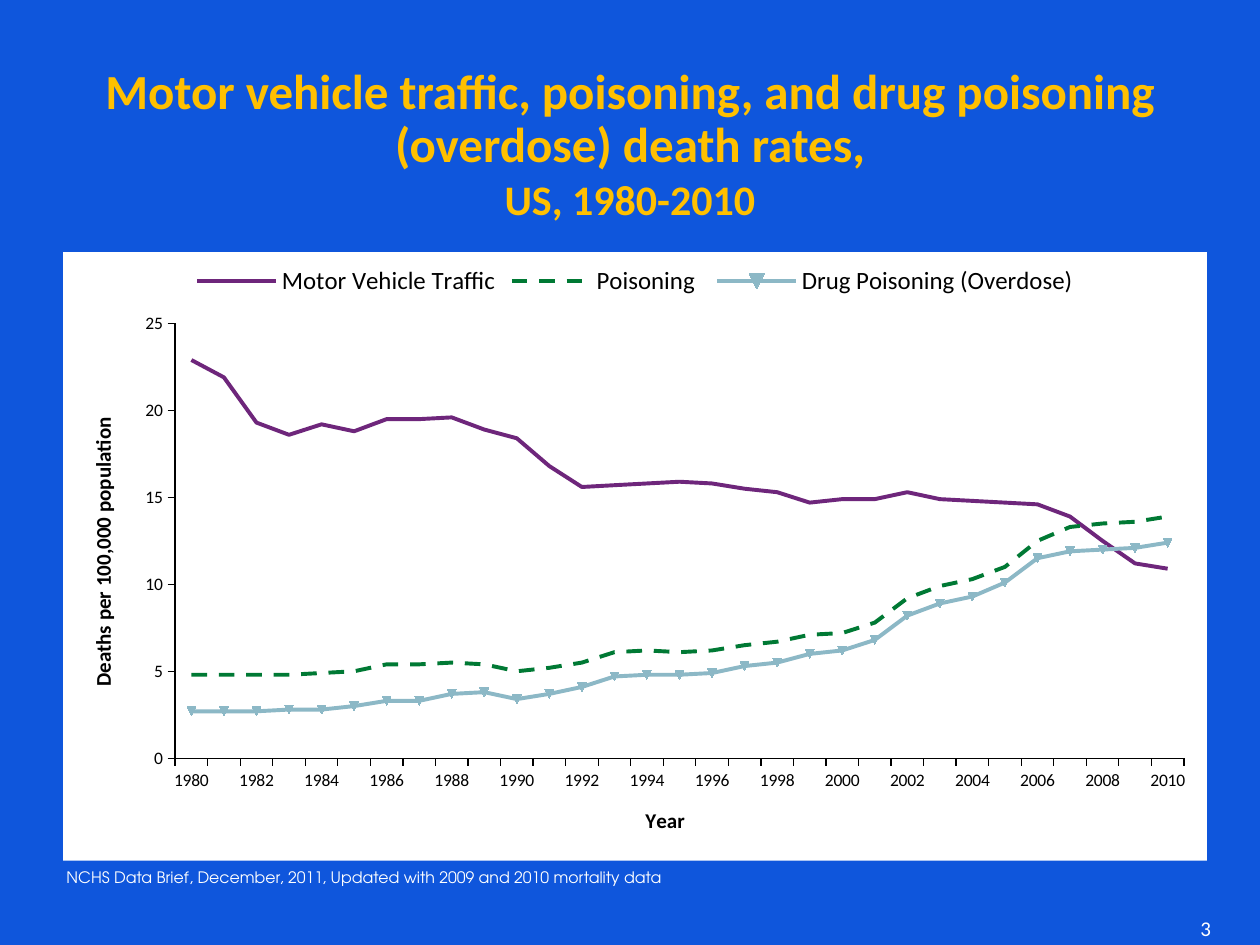
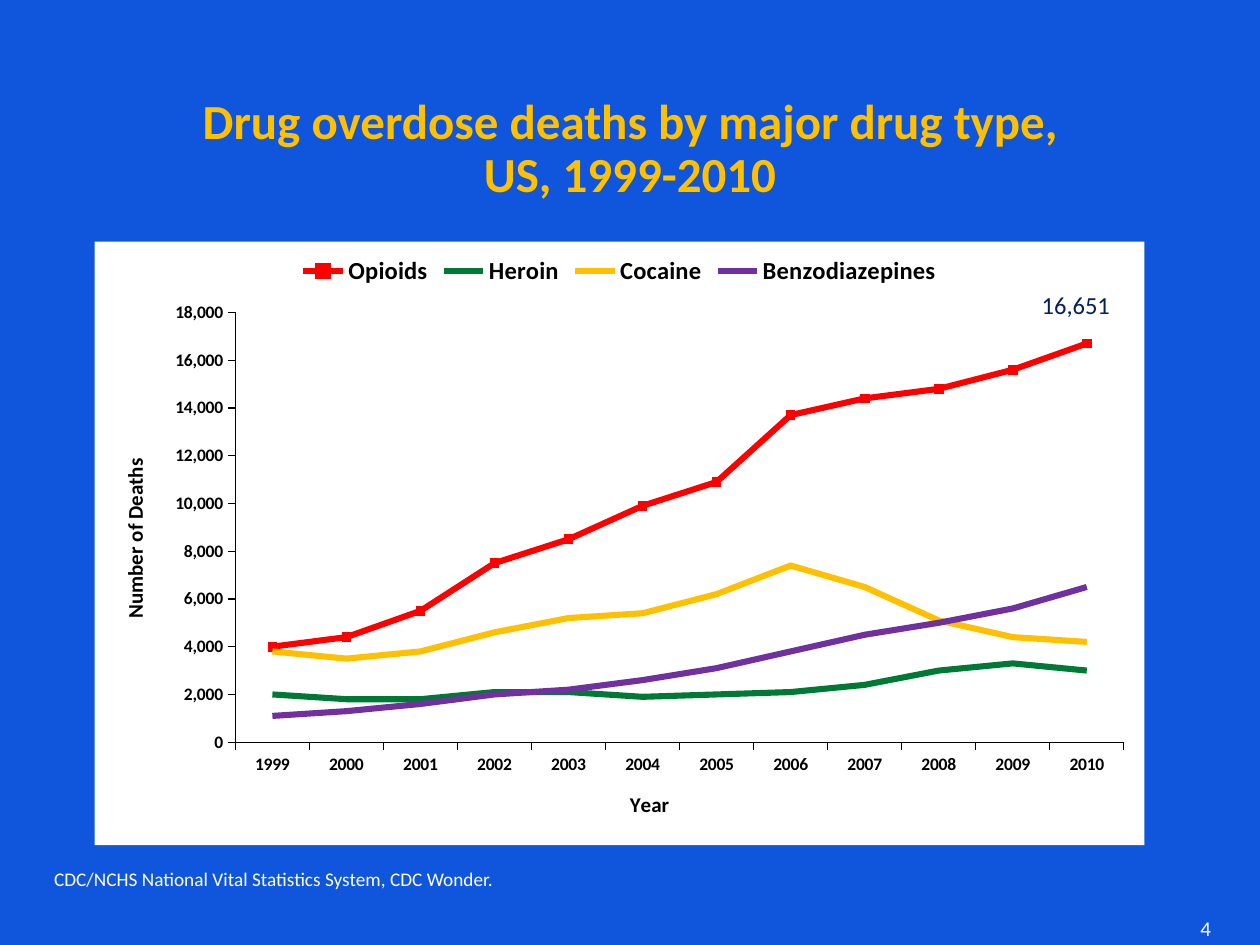
from pptx import Presentation
from pptx.chart.data import CategoryChartData
from pptx.dml.color import RGBColor
from pptx.enum.chart import XL_CHART_TYPE, XL_LEGEND_POSITION, XL_MARKER_STYLE, XL_TICK_MARK
from pptx.enum.dml import MSO_LINE
from pptx.enum.text import MSO_ANCHOR, MSO_AUTO_SIZE, PP_ALIGN
from pptx.oxml import parse_xml
from pptx.oxml.ns import nsdecls, qn
from pptx.util import Cm, Pt

LINE_CHART = XL_CHART_TYPE.LINE_MARKERS
LEGEND_TOP = XL_LEGEND_POSITION.TOP
AUTO_MARKER, NO_MARKER = XL_MARKER_STYLE.AUTOMATIC, XL_MARKER_STYLE.NONE
TICK_OUT, TICK_NONE = XL_TICK_MARK.OUTSIDE, XL_TICK_MARK.NONE
DASH = MSO_LINE.DASH
BOTTOM, TOP = MSO_ANCHOR.BOTTOM, MSO_ANCHOR.TOP
CENTER, LEFT = PP_ALIGN.CENTER, PP_ALIGN.LEFT
NO_AUTOFIT = MSO_AUTO_SIZE.NONE

FONT = "Calibri"
NOTE_FONT = "TeX Gyre Adventor"
FIRST_PAGE = 3
PAGE_BOX = (23.95, 18.34, 1.04, 0.76)
MARKER_SIZE = 5

COLORS = {
    "background": "0F56DC", "gold": "FFC000", "white": "FFFFFF", "black": "000000",
    "navy": "002060", "plum": "6E267B", "green": "007934", "sky": "8CB8C6",
    "red": "FF0000", "purple": "7030A0",
}

SLIDES = [
    {
        "title": [("Motor vehicle traffic, poisoning, and drug poisoning (overdose) death rates,", 28),
                  ("US, 1980-2010", 24)],
        "title_box": (1.27, 1.47, 22.86, 3.18),
        "note": ("NCHS Data Brief, December, 2011, Updated with 2009 and 2010 mortality data", 9, NOTE_FONT),
        "note_box": (1.09, 16.31, 22.86, 1.7),
        "chart_box": (1.27, 5.08, 23.06, 12.27),
        "plot_percent": (9.8, 11.75, 88.2, 71.45),
        "years": [str(year) if year % 2 == 0 else "" for year in range(1980, 2011)],
        "value_title": "Deaths per 100,000 population",
        "scale": (25, 5, "General"),
        "bold": False,
        "legend_size": 14.2,
        "line_width": 2.25,
        "series": [
            ("Motor Vehicle Traffic", "plum", None, False,
             [22.9, 21.9, 19.3, 18.6, 19.2, 18.8, 19.5, 19.5, 19.6, 18.9, 18.4,
              16.8, 15.6, 15.7, 15.8, 15.9, 15.8, 15.5, 15.3, 14.7, 14.9,
              14.9, 15.3, 14.9, 14.8, 14.7, 14.6, 13.9, 12.5, 11.2, 10.9]),
            ("Poisoning ", "green", DASH, False,
             [4.8, 4.8, 4.8, 4.8, 4.9, 5, 5.4, 5.4, 5.5, 5.4, 5,
              5.2, 5.5, 6.1, 6.2, 6.1, 6.2, 6.5, 6.7, 7.1, 7.2,
              7.8, 9.2, 9.9, 10.3, 11, 12.5, 13.3, 13.5, 13.6, 13.9]),
            ("Drug Poisoning (Overdose)", "sky", None, True,
             [2.7, 2.7, 2.7, 2.8, 2.8, 3, 3.3, 3.3, 3.7, 3.8, 3.4,
              3.7, 4.1, 4.7, 4.8, 4.8, 4.9, 5.3, 5.5, 6, 6.2,
              6.8, 8.2, 8.9, 9.3, 10.1, 11.5, 11.9, 12, 12.1, 12.4]),
        ],
    },
    {
        "title": [("Drug overdose deaths by major drug type,", 28), ("US, 1999-2010", 28)],
        "title_box": (1.27, 2.32, 22.86, 1.88),
        "note": ("CDC/NCHS National Vital Statistics System, CDC Wonder.", 11, FONT),
        "note_box": (0.84, 16.94, 22.86, 1.14),
        "chart_box": (1.91, 4.87, 21.16, 12.17),
        "plot_percent": (13.4, 11.75, 84.65, 71.2),
        "years": [str(year) for year in range(1999, 2011)],
        "value_title": "Number of Deaths",
        "scale": (18000, 2000, "#,##0"),
        "bold": True,
        "legend_size": 14,
        "line_width": 3.5,
        "series": [
            ("Opioids", "red", None, True,
             [4000, 4400, 5500, 7500, 8500, 9900, 10900, 13700, 14400, 14800, 15600, 16700]),
            ("Heroin", "green", None, False,
             [2000, 1800, 1800, 2100, 2100, 1900, 2000, 2100, 2400, 3000, 3300, 3000]),
            ("Cocaine", "gold", None, False,
             [3800, 3500, 3800, 4600, 5200, 5400, 6200, 7400, 6500, 5100, 4400, 4200]),
            ("Benzodiazepines", "purple", None, False,
             [1100, 1300, 1600, 2000, 2200, 2600, 3100, 3800, 4500, 5000, 5600, 6500]),
        ],
        "callout": ("16,651", 14, FONT),
        "callout_box": (20.75, 5.72, 2.34, 0.86),
    },
]


def rgb(name):
    return RGBColor.from_string(COLORS[name])


def style_font(font, size, color="black", bold=False, face=FONT):
    font.name, font.size, font.bold = face, Pt(size), bold
    font.color.rgb = rgb(color)


def add_text(slide, box, content, color, anchor=TOP, spacing=None):
    text, size, face = content
    frame = slide.shapes.add_textbox(*map(Cm, box)).text_frame
    frame.word_wrap = True
    frame.vertical_anchor = anchor
    paragraph = frame.paragraphs[0]
    paragraph.alignment = LEFT
    paragraph.line_spacing = spacing
    run = paragraph.add_run()
    run.text = text
    style_font(run.font, size, color, face=face)


def add_page_number(slide, number):
    frame = slide.shapes.add_textbox(*map(Cm, PAGE_BOX)).text_frame
    frame.word_wrap = True
    frame.paragraphs[0]._p.append(parse_xml(
        f'<a:fld {nsdecls("a")} id="{{B6F15528-21DE-4FAA-801E-634DDDAF4B2B}}" type="slidenum">'
        f'<a:rPr lang="en-US" sz="1200"><a:solidFill><a:srgbClr val="{COLORS["white"]}"/></a:solidFill>'
        f'<a:latin typeface="{FONT}"/></a:rPr><a:t>{number}</a:t></a:fld>'))


def fill_title(slide, lines, box):
    title = slide.shapes.title
    title.left, title.top, title.width, title.height = map(Cm, box)
    frame = title.text_frame
    frame.auto_size = NO_AUTOFIT
    frame.word_wrap = True
    frame.vertical_anchor = BOTTOM
    paragraph = frame.paragraphs[0]
    paragraph.alignment = CENTER
    paragraph.line_spacing = Pt(30)
    for index, (text, size) in enumerate(lines):
        if index:
            paragraph.add_line_break()
        run = paragraph.add_run()
        run.text = text
        style_font(run.font, size, "gold", True)


def style_axis(axis, title, bold):
    axis.has_major_gridlines = False
    axis.major_tick_mark, axis.minor_tick_mark = TICK_OUT, TICK_NONE
    axis.format.line.color.rgb = rgb("black")
    axis.format.line.width = Pt(0.75)
    style_font(axis.tick_labels.font, 10, bold=bold)
    run = axis.axis_title.text_frame.paragraphs[0].add_run()
    run.text = title
    style_font(run.font, 12, bold=True)


def place_plot(chart, percents):
    space = chart._chartSpace
    space.find(qn("c:chart")).addnext(parse_xml(
        f'<c:spPr {nsdecls("c", "a")}><a:solidFill><a:srgbClr val="{COLORS["white"]}"/></a:solidFill>'
        '<a:ln><a:noFill/></a:ln></c:spPr>'))
    area = space.find(f'.//{qn("c:plotArea")}')
    for layout in area.findall(qn("c:layout")):
        area.remove(layout)
    modes = "".join(f'<c:{side}Mode val="edge"/>' for side in "xy")
    sizes = "".join(f'<c:{side} val="{percent / 100}"/>' for side, percent in zip("xywh", percents))
    area.insert(0, parse_xml(
        f'<c:layout {nsdecls("c")}><c:manualLayout><c:layoutTarget val="inner"/>'
        f'{modes}{sizes}</c:manualLayout></c:layout>'))


def add_death_chart(slide, content):
    maximum, step, number_format = content["scale"]
    data = CategoryChartData(number_format=number_format)
    data.categories = content["years"]
    for name, _, _, _, values in content["series"]:
        data.add_series(name, values)
    chart = slide.shapes.add_chart(LINE_CHART, *map(Cm, content["chart_box"]), data).chart
    chart.has_title = False
    style_font(chart.font, 10)
    chart.has_legend = True
    chart.legend.position = LEGEND_TOP
    chart.legend.include_in_layout = False
    style_font(chart.legend.font, content["legend_size"], bold=content["bold"])

    style_axis(chart.category_axis, "Year", content["bold"])
    deaths = chart.value_axis
    style_axis(deaths, content["value_title"], content["bold"])
    deaths.minimum_scale, deaths.maximum_scale, deaths.major_unit = 0, maximum, step
    deaths.tick_labels.number_format = number_format
    deaths.tick_labels.number_format_is_linked = False

    chart.plots[0].vary_by_categories = False
    for series, (_, color, dash, marked, _) in zip(chart.plots[0].series, content["series"]):
        series.smooth = False
        line, marker = series.format.line, series.marker
        line.color.rgb = rgb(color)
        line.width = Pt(content["line_width"])
        if dash:
            line.dash_style = dash
        marker.style = AUTO_MARKER if marked else NO_MARKER
        if marked:
            marker.size = MARKER_SIZE
            marker.format.fill.solid()
            marker.format.fill.fore_color.rgb = rgb(color)
            marker.format.line.color.rgb = rgb(color)
    place_plot(chart, content["plot_percent"])


def main():
    deck = Presentation()
    deck.slide_width, deck.slide_height = Cm(25.4), Cm(19.05)
    deck.element.set("firstSlideNum", str(FIRST_PAGE))
    background = deck.slide_master.background.fill
    background.solid()
    background.fore_color.rgb = rgb("background")
    title_only = deck.slide_layouts.get_by_name("Title Only")
    for number, content in enumerate(SLIDES, FIRST_PAGE):
        slide = deck.slides.add_slide(title_only)
        fill_title(slide, content["title"], content["title_box"])
        add_text(slide, content["note_box"], content["note"], "white", BOTTOM, Pt(11))
        add_death_chart(slide, content)
        if "callout" in content:
            add_text(slide, content["callout_box"], content["callout"], "navy")
        add_page_number(slide, number)
    deck.save("out.pptx")


if __name__ == "__main__":
    main()
